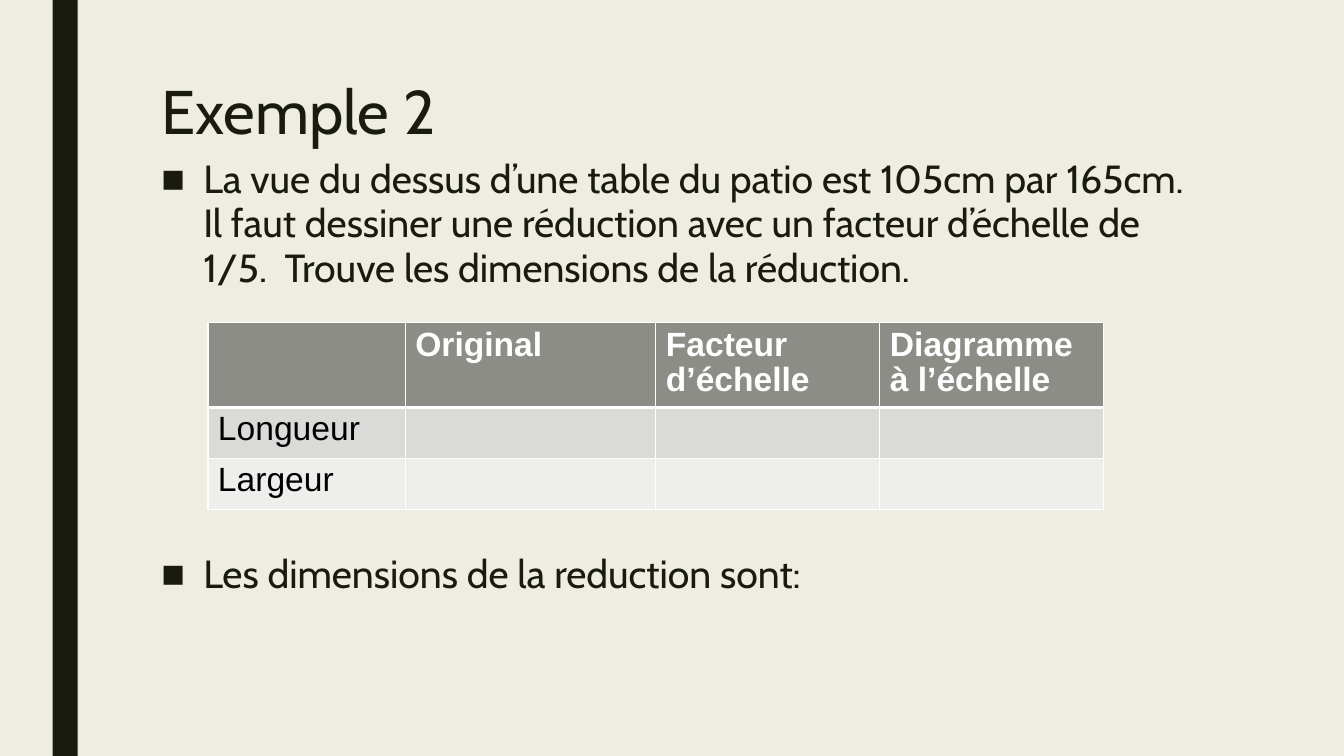
from dataclasses import dataclass

from lxml import etree
from pptx import Presentation
from pptx.dml.color import RGBColor
from pptx.enum.shapes import MSO_SHAPE
from pptx.enum.text import MSO_ANCHOR, MSO_AUTO_SIZE
from pptx.oxml.ns import qn
from pptx.util import Pt

RECTANGLE = MSO_SHAPE.RECTANGLE
TOP, MIDDLE = MSO_ANCHOR.TOP, MSO_ANCHOR.MIDDLE
NO_AUTOFIT = MSO_AUTO_SIZE.NONE

CREAM = RGBColor(0xEF, 0xED, 0xE3)
INK = RGBColor(0x19, 0x1B, 0x0E)
HEADER_GREY = RGBColor(0x8C, 0x8D, 0x86)
DARK_BAND = RGBColor(0xDA, 0xDB, 0xD9)
LIGHT_BAND = RGBColor(0xEE, 0xEE, 0xED)
WHITE = RGBColor(0xFF, 0xFF, 0xFF)
BLACK = RGBColor(0, 0, 0)

TITLE_FONT = {"name": "Cabin", "size": Pt(44), "bold": False}
BODY_FONT = {"name": "Cabin", "size": Pt(28), "bold": False}
HEADER_FONT = {"name": "Arial", "size": Pt(24), "bold": True}
LABEL_FONT = {"name": "Arial", "size": Pt(24), "bold": False}
BULLET_INDENT = Pt(30)
COLUMN_WIDTHS = (141, 179, 160, 160)


@dataclass(frozen=True)
class Bullet:
    text: str
    space_before: float


@dataclass(frozen=True)
class TableRow:
    labels: tuple[str, ...]
    height: float
    fill: RGBColor
    color: RGBColor
    font: dict
    top_border: float
    bottom_border: float


BULLETS = (
    Bullet("La vue du dessus d’une table du patio est 105cm par 165cm.  "
           "Il faut dessiner une réduction avec un facteur d’échelle de 1/5.  "
           "Trouve les dimensions de la réduction.", 10),
    Bullet("Les dimensions de la reduction sont:", 185),
)
ROWS = (
    TableRow(("", "Original", "Facteur d’échelle", "Diagramme à l’échelle"),
             60.5, HEADER_GREY, WHITE, HEADER_FONT, 1, 3),
    TableRow(("Longueur", "", "", ""), 36.5, DARK_BAND, BLACK, LABEL_FONT, 3, 1),
    TableRow(("Largeur", "", "", ""), 36.5, LIGHT_BAND, BLACK, LABEL_FONT, 1, 1),
)


def apply_format(target, values: dict) -> None:
    for attribute, value in values.items():
        setattr(target, attribute, value)


def write(paragraph, text: str, font: dict, color: RGBColor, spacing: float) -> None:
    run = paragraph.add_run()
    run.text = text
    apply_format(run.font, font)
    run.font.color.rgb = color
    paragraph.line_spacing = spacing


def place(placeholder, left: float, top: float, width: float, height: float, anchor):
    apply_format(placeholder, {"left": Pt(left), "top": Pt(top),
                               "width": Pt(width), "height": Pt(height)})
    frame = placeholder.text_frame
    apply_format(frame, {"word_wrap": True, "auto_size": NO_AUTOFIT,
                         "vertical_anchor": anchor})
    return frame


def add_bullet(paragraph, bullet: Bullet) -> None:
    write(paragraph, bullet.text, BODY_FONT, INK, 0.94)
    apply_format(paragraph, {"space_before": Pt(bullet.space_before),
                             "space_after": Pt(2)})
    properties = paragraph._p.get_or_add_pPr()
    properties.set("marL", str(BULLET_INDENT))
    properties.set("indent", str(-BULLET_INDENT))
    etree.SubElement(properties, qn("a:buFont")).set("typeface", "Arial")
    etree.SubElement(properties, qn("a:buChar")).set("char", "■")


def add_borders(cell, row: TableRow) -> None:
    properties = cell._tc.get_or_add_tcPr()
    widths = {"L": 1, "R": 1, "T": row.top_border, "B": row.bottom_border}
    for side, width in widths.items():
        line = etree.SubElement(properties, qn(f"a:ln{side}"), w=str(Pt(width)))
        solid = etree.SubElement(line, qn("a:solidFill"))
        etree.SubElement(solid, qn("a:srgbClr")).set("val", str(WHITE))


def add_dimensions_table(slide) -> None:
    frame = slide.shapes.add_table(
        len(ROWS), len(COLUMN_WIDTHS), Pt(148.5), Pt(230.5),
        Pt(sum(COLUMN_WIDTHS)), Pt(sum(row.height for row in ROWS)))
    table = frame.table
    for column, width in zip(table.columns, COLUMN_WIDTHS):
        column.width = Pt(width)
    for table_row, row in zip(table.rows, ROWS):
        table_row.height = Pt(row.height)
        for cell, label in zip(table_row.cells, row.labels):
            add_borders(cell, row)
            cell.fill.solid()
            cell.fill.fore_color.rgb = row.fill
            if label:
                write(cell.text_frame.paragraphs[0], label, row.font, row.color, 0.95)


def main() -> None:
    presentation = Presentation()
    apply_format(presentation, {"slide_width": Pt(960), "slide_height": Pt(540)})
    slide = presentation.slides.add_slide(presentation.slide_layouts[1])
    slide.background.fill.solid()
    slide.background.fill.fore_color.rgb = CREAM

    side_band = slide.shapes.add_shape(RECTANGLE, Pt(37.5), Pt(0), Pt(18), Pt(540))
    side_band.shadow.inherit = False
    side_band.fill.solid()
    side_band.fill.fore_color.rgb = INK
    side_band.line.fill.background()

    heading = place(slide.shapes.title, 108, 54, 756, 55.5, MIDDLE)
    write(heading.paragraphs[0], "Exemple 2", TITLE_FONT, INK, 0.89)
    heading.paragraphs[0].alignment = 1

    exercise = place(slide.placeholders[1], 108, 109.5, 756, 352, TOP)
    for index, bullet in enumerate(BULLETS):
        add_bullet(exercise.add_paragraph() if index else exercise.paragraphs[0], bullet)

    add_dimensions_table(slide)
    presentation.save("out.pptx")


if __name__ == "__main__":
    main()
